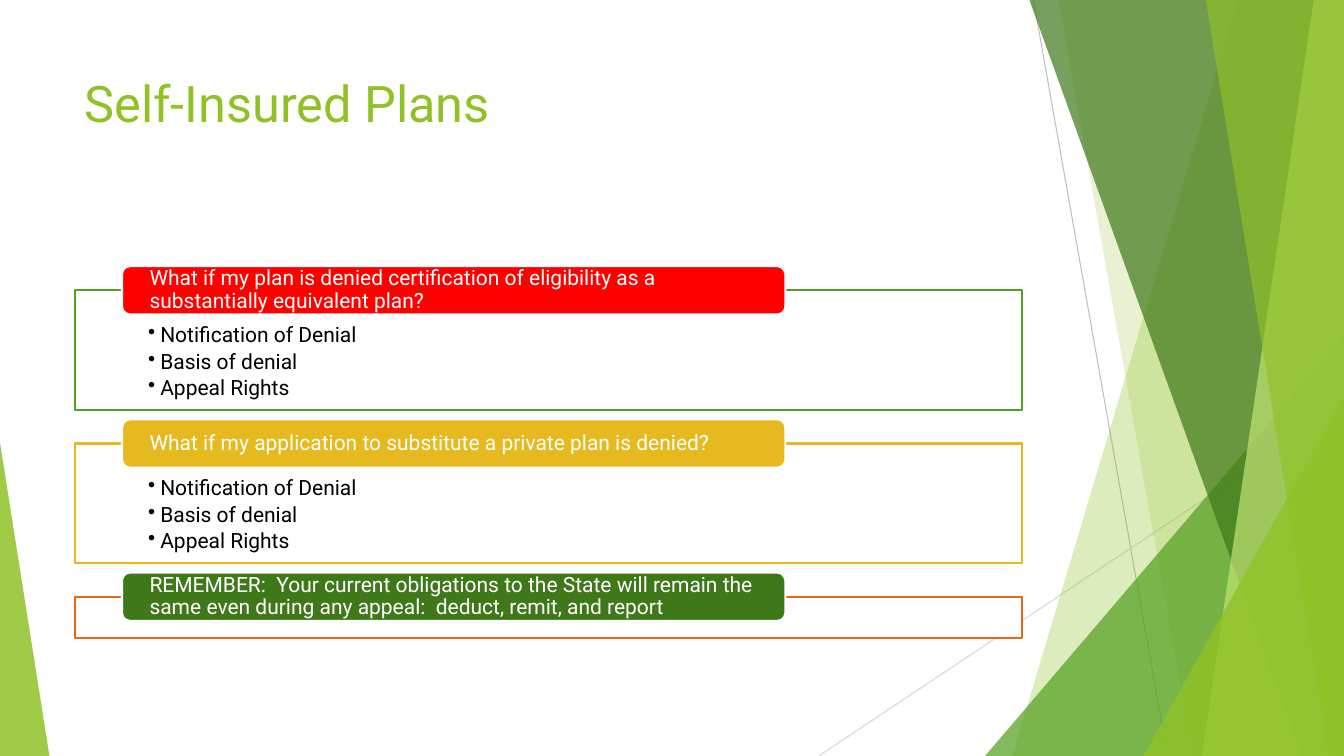
from lxml import etree
from pptx import Presentation
from pptx.dml.color import RGBColor
from pptx.enum import shapes, text
from pptx.oxml.ns import qn
from pptx.util import Inches, Pt

SLIDE_W, SLIDE_H = 13.33, 7.5
COLOURS = {
    "lime": "90C226", "pale lime": "C0E474", "green": "54A021", "dark green": "3F7819",
    "red": "FF0000", "gold": "E6B91E", "orange": "E76618", "white": "FFFFFF",
    "black": "000000", "grey": "BFBFBF", "light grey": "D9D9D9",
}
TITLE = "Self-Insured Plans"
OUTCOMES = ["Notification of Denial", "Basis of denial", "Appeal Rights"]
# heading, points, heading colour, frame colour, frame height
CARDS = [
    ("What if my plan is denied certification of eligibility as a substantially equivalent plan?",
     OUTCOMES, "red", "green", 1.19),
    ("What if my application to substitute a private plan is denied?",
     OUTCOMES, "gold", "gold", 1.19),
    ("REMEMBER:  Your current obligations to the State will remain the same even during "
     "any appeal:  deduct, remit, and report",
     [], "dark green", "orange", 0.41),
]
# start, end, colour
RAYS = [
    ((10.25, 0), (11.58, SLIDE_H), "grey"),
    ((SLIDE_W, 4.03), (8.12, SLIDE_H), "light grey"),
]
# facets reach the right edge: (top x, bottom x); triangles: (left, top, width, apex)
FACETS = [
    ("band", (12.28, 10.04), "lime", 30),
    ("band", (10.5, 11.83), "lime", 20),
    ("triangle", (9.77, 3.33, 3.56, 1), "green", 72),
    ("band", (10.21, 12.91), "dark green", 70),
    ("band", (13.03, 11.92), "pale lime", 70),
    ("band", (11.96, 13.18), "lime", 65),
    ("triangle", (11.34, 3.93, 1.99, 1), "lime", 80),
    ("triangle", (0, 4.39, 0.49, 0), "lime", 85),
]
CARD_LEFT, CARD_TOP, CARD_W, CARD_GAP = 0.74, 2.88, 9.4, 0.33
HEADING_LEFT, HEADING_W, HEADING_H, HEADING_RISE = 1.21, 6.58, 0.48, 0.24
BULLET_INDENT = 0.12

prs = Presentation()
prs.slide_width, prs.slide_height = Inches(SLIDE_W), Inches(SLIDE_H)
slide = prs.slides.add_slide(prs.slide_layouts[6])


def rgb(colour):
    return RGBColor.from_string(COLOURS[colour])


def paint(shape, fill, opacity=100, outline=None):
    shape.shadow.inherit = False
    shape.fill.solid()
    shape.fill.fore_color.rgb = rgb(fill)
    if opacity < 100:
        colour = shape.fill._xPr.find(qn("a:solidFill"))[0]
        etree.SubElement(colour, qn("a:alpha"), val=str(opacity * 1000))
    if outline:
        shape.line.color.rgb = rgb(outline)
        shape.line.width = Pt(1.5)
    else:
        shape.line.fill.background()


def add_preset(kind, *box):
    return slide.shapes.add_shape(kind, *map(Inches, box))


def write(shape, lines, colour, size, frame_format, paragraph_format):
    frame = shape.text_frame
    frame.text = "\n".join(lines)
    for name, value in {"word_wrap": True, **frame_format}.items():
        setattr(frame, name, value)
    for paragraph in frame.paragraphs:
        paragraph.alignment = text.PP_ALIGN.LEFT
        for name, value in paragraph_format.items():
            setattr(paragraph, name, value)
        paragraph.font.name = "Roboto"
        for run in paragraph.runs:
            run.font.name, run.font.size = "Roboto", Pt(size)
            run.font.color.rgb = rgb(colour)


def add_bullets(shape):
    for paragraph in shape.text_frame.paragraphs:
        properties = paragraph._p.get_or_add_pPr()
        properties.set("marL", str(Inches(BULLET_INDENT)))
        properties.set("indent", str(-Inches(BULLET_INDENT)))
        bullet = etree.Element(qn("a:buChar"), char="•")
        default_run = properties.find(qn("a:defRPr"))
        default_run.addprevious(bullet)


def insets(left, top, right, bottom):
    sides = {"left": left, "top": top, "right": right, "bottom": bottom}
    return {f"margin_{side}": Inches(inset) for side, inset in sides.items()}


for start, end, colour in RAYS:
    ray = slide.shapes.add_connector(
        shapes.MSO_CONNECTOR.STRAIGHT, *map(Inches, start + end))
    ray.line.color.rgb = rgb(colour)
    ray.line.width = Pt(0.75)
    etree.SubElement(ray._element.spPr, qn("a:effectLst"))

for kind, geometry, colour, opacity in FACETS:
    if kind == "band":
        top_x, bottom_x = geometry
        outline = slide.shapes.build_freeform(Inches(top_x), 0)
        corners = [(SLIDE_W, 0), (SLIDE_W, SLIDE_H), (bottom_x, SLIDE_H)]
        outline.add_line_segments([(Inches(x), Inches(y)) for x, y in corners])
        facet = outline.convert_to_shape()
    else:
        left, top, width, apex = geometry
        facet = add_preset(shapes.MSO_SHAPE.ISOSCELES_TRIANGLE, left, top, width, SLIDE_H - top)
        facet.adjustments[0] = apex
    paint(facet, colour, opacity)

title = slide.shapes.add_textbox(*map(Inches, (0.74, 0.67, 9.4, 1.44)))
write(title, [TITLE], "lime", 36, {"vertical_anchor": text.MSO_ANCHOR.TOP}, {})

top = CARD_TOP
for heading, points, heading_colour, frame_colour, height in CARDS:
    card = add_preset(shapes.MSO_SHAPE.RECTANGLE, CARD_LEFT, top, CARD_W, height)
    paint(card, "white", 90, frame_colour)
    if points:
        write(card, points, "black", 15,
              {"vertical_anchor": text.MSO_ANCHOR.TOP, **insets(0.73, 0.34, 0.73, 0.12)},
              {"line_spacing": 0.9, "space_after": Pt(2.7)})
        add_bullets(card)
    tab = add_preset(shapes.MSO_SHAPE.ROUNDED_RECTANGLE,
                     HEADING_LEFT, top - HEADING_RISE, HEADING_W, HEADING_H)
    paint(tab, heading_colour, outline="white")
    write(tab, [heading], "white", 15,
          {"vertical_anchor": text.MSO_ANCHOR.MIDDLE, **insets(0.25, 0, 0.25, 0)},
          {"line_spacing": 0.9})
    top += height + CARD_GAP

prs.save("out.pptx")
